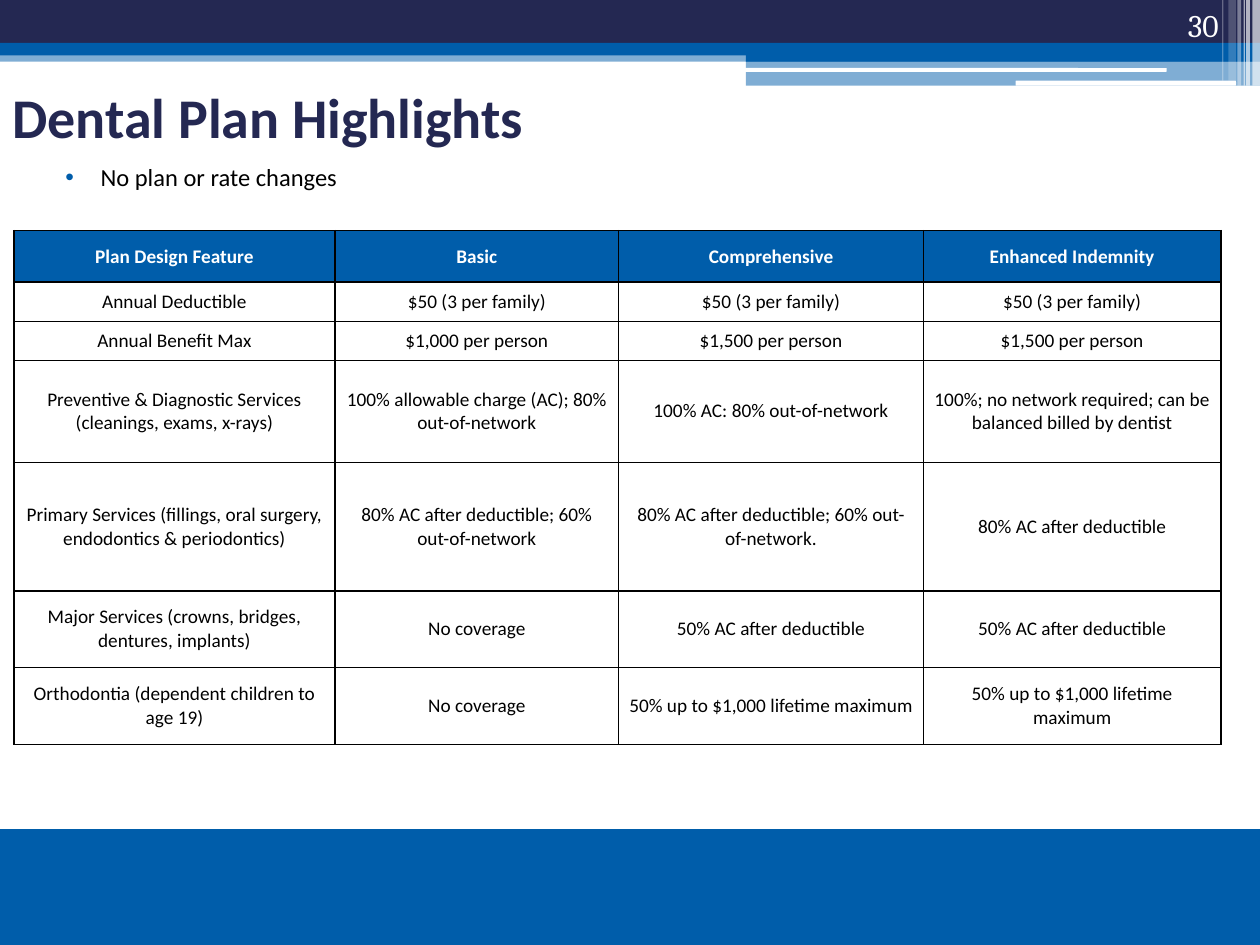
"""Build the dental plan highlights slide."""
import lxml.etree
import pptx
import pptx.dml.color
import pptx.enum.shapes
import pptx.enum.text
import pptx.oxml.ns
import pptx.util

Inches, Pt = pptx.util.Inches, pptx.util.Pt
SHAPE = pptx.enum.shapes.MSO_SHAPE
ALIGN = pptx.enum.text.PP_ALIGN
ANCHOR = pptx.enum.text.MSO_ANCHOR

NAVY, BLUE, WHITE, BLACK = "242852", "005DAA", "FFFFFF", "000000"

BANDS = [
    (0, 0.4, 10, 0.09, BLUE, 50),
    (0, 0, 10, 0.34, NAVY, 100),
    (0, 0.34, 10, 0.1, BLUE, 100),
    (5.92, 0.39, 4.08, 0.1, BLUE, 100),
    (5.92, 0.48, 4.08, 0.2, BLUE, 50),
]
ROUNDED_BARS = [(5.91, 0.54, 3.35, 0.03), (8.06, 0.64, 1.75, 0.04)]
STRIPES = [
    (9.94, 0.06, 0.68, 65),
    (9.89, 0.03, 0.68, 65),
    (9.87, 0.01, 0.68, 60),
    (9.82, 0.03, 0.68, 40),
    (9.75, 0.06, 0.64, 20),
    (9.7, 0.01, 0.64, 30),
]
FOOTER = (0, 6.58, 10, 0.92, BLUE, 100)

COLUMN_WIDTHS = [2.55, 2.25, 2.42, 2.36]
ROW_HEIGHTS = [0.41, 0.31, 0.31, 0.81, 1.02, 0.61, 0.61]
PLANS = [
    ("Plan Design Feature", "Basic", "Comprehensive", "Enhanced Indemnity"),
    ("Annual Deductible", "$50 (3 per family)", "$50 (3 per family)", "$50 (3 per family)"),
    ("Annual Benefit Max", "$1,000 per person", "$1,500 per person", "$1,500 per person"),
    ("Preventive & Diagnostic Services (cleanings, exams, x-rays)",
     "100% allowable charge (AC); 80% out-of-network",
     "100% AC: 80% out-of-network",
     "100%; no network required; can be balanced billed by dentist"),
    ("Primary Services (fillings, oral surgery, endodontics & periodontics)",
     "80% AC after deductible; 60% out-of-network",
     "80% AC after deductible; 60% out-of-network.",
     "80% AC after deductible"),
    ("Major Services (crowns, bridges, dentures, implants)",
     "No coverage", "50% AC after deductible", "50% AC after deductible"),
    ("Orthodontia (dependent children to age 19)",
     "No coverage", "50% up to $1,000 lifetime maximum", "50% up to $1,000 lifetime maximum"),
]


def rgb(color):
    return pptx.dml.color.RGBColor.from_string(color)


def add_child(parent, tag, **attributes):
    return lxml.etree.SubElement(parent, pptx.oxml.ns.qn(tag), attributes)


def add_bar(slide, left, top, width, height, color, opacity=100, kind=SHAPE.RECTANGLE):
    bar = slide.shapes.add_shape(kind, *map(Inches, (left, top, width, height)))
    bar.shadow.inherit = False
    bar.line.fill.background()
    bar.fill.solid()
    bar.fill.fore_color.rgb = rgb(color)
    if opacity < 100:
        tint = bar.fill._xPr.find(".//" + pptx.oxml.ns.qn("a:srgbClr"))
        add_child(tint, "a:alpha", val=str(opacity * 1000))


def write(paragraph, text, size, color, font="Calibri", bold=False, align=ALIGN.LEFT):
    paragraph.alignment = align
    run = paragraph.add_run()
    run.text = text
    run.font.size = Pt(size)
    run.font.name = font
    run.font.bold = bold
    run.font.color.rgb = rgb(color)


def add_text_box(slide, left, top, width, height, anchor):
    frame = slide.shapes.add_textbox(*map(Inches, (left, top, width, height))).text_frame
    frame.word_wrap = True
    frame.vertical_anchor = anchor
    return frame.paragraphs[0]


def add_bullet(paragraph, color):
    properties = paragraph._p.get_or_add_pPr()
    properties.set("marL", str(Inches(0.4)))
    properties.set("indent", str(Inches(-0.28)))
    add_child(add_child(properties, "a:buClr"), "a:srgbClr", val=color)
    add_child(properties, "a:buFont", typeface="Arial")
    add_child(properties, "a:buChar", char="•")


def style_cell(cell, text, is_header):
    cell.margin_left = cell.margin_right = Inches(0.07)
    cell.margin_top = cell.margin_bottom = 0
    cell.vertical_anchor = ANCHOR.MIDDLE
    write(cell.text_frame.paragraphs[0], text, 11, WHITE if is_header else BLACK,
          bold=is_header, align=ALIGN.CENTER)
    properties = cell._tc.get_or_add_tcPr()
    for side in ("a:lnL", "a:lnR", "a:lnT", "a:lnB"):
        border = add_child(properties, side, w=str(Pt(1)))
        add_child(add_child(border, "a:solidFill"), "a:srgbClr", val=BLACK)
    if is_header:
        cell.fill.solid()
        cell.fill.fore_color.rgb = rgb(BLUE)
    else:
        cell.fill.background()


def add_plan_table(slide):
    plan_table = slide.shapes.add_table(
        len(PLANS), len(COLUMN_WIDTHS), Inches(0.11), Inches(1.83),
        Inches(sum(COLUMN_WIDTHS)), Inches(sum(ROW_HEIGHTS))).table
    plan_table.horz_banding = False
    for column, width in zip(plan_table.columns, COLUMN_WIDTHS):
        column.width = Inches(width)
    for index, (row, height, texts) in enumerate(zip(plan_table.rows, ROW_HEIGHTS, PLANS)):
        row.height = Inches(height)
        for cell, text in zip(row.cells, texts):
            style_cell(cell, text, index == 0)


def main():
    deck = pptx.Presentation()
    deck.slide_width, deck.slide_height = Inches(10), Inches(7.5)
    slide = deck.slides.add_slide(deck.slide_layouts[6])

    for band in BANDS:
        add_bar(slide, *band)
    for bar in ROUNDED_BARS:
        add_bar(slide, *bar, WHITE, kind=SHAPE.ROUNDED_RECTANGLE)
    for left, width, height, opacity in STRIPES:
        add_bar(slide, left, 0, width, height, WHITE, opacity)
    add_bar(slide, *FOOTER)

    title = add_text_box(slide, 0, 0.67, 8.22, 0.5, ANCHOR.MIDDLE)
    write(title, "Dental Plan Highlights", 32, NAVY, bold=True)
    add_plan_table(slide)
    rate_note = add_text_box(slide, 0.3, 1.24, 9.2, 0.92, ANCHOR.TOP)
    add_bullet(rate_note, BLUE)
    write(rate_note, "No plan or rate changes", 14, BLACK)
    page_number = add_text_box(slide, 8.94, 0, 0.83, 0.4, ANCHOR.BOTTOM)
    write(page_number, "30", 18, WHITE, font="Cambria", align=ALIGN.RIGHT)

    deck.save("out.pptx")


if __name__ == "__main__":
    main()
